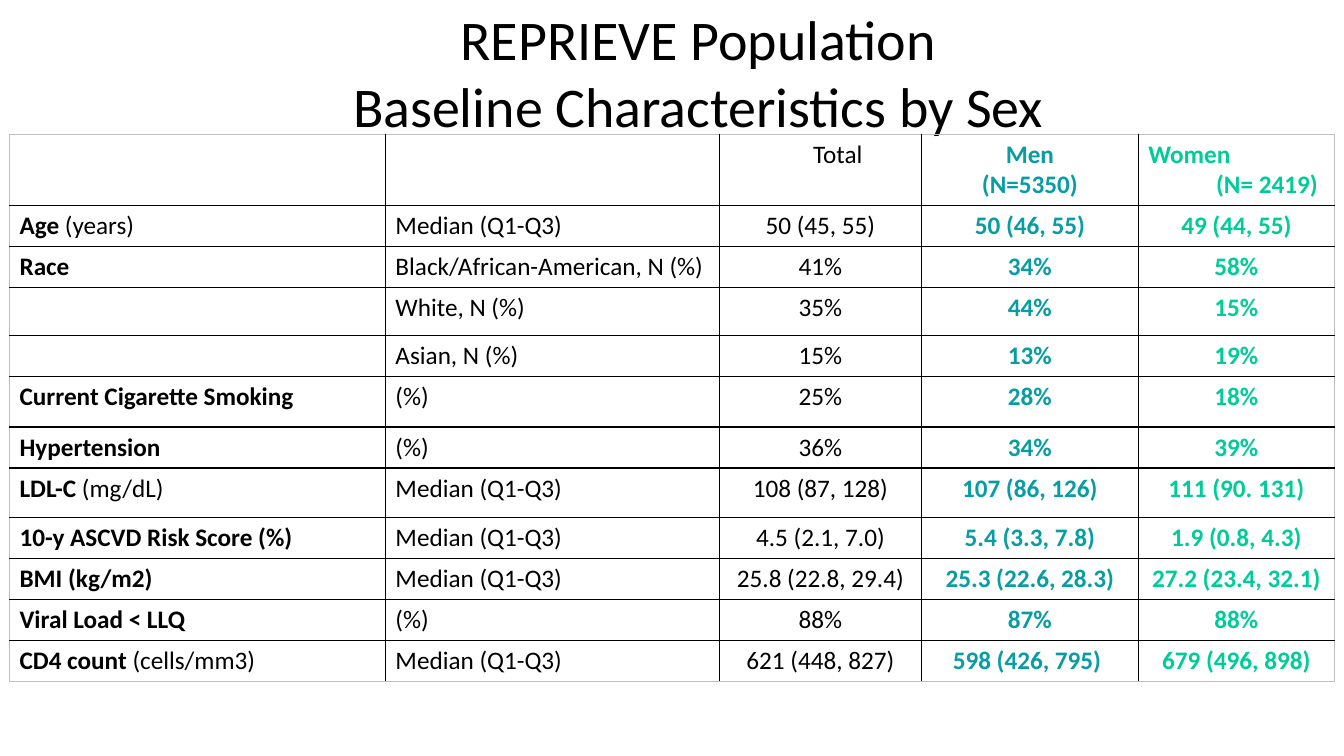
from pptx import Presentation
from pptx.dml.color import RGBColor
from pptx.enum.text import MSO_ANCHOR, MSO_AUTO_SIZE, PP_ALIGN as Align
from pptx.oxml.ns import qn
from pptx.util import Pt
from lxml.etree import SubElement

FONT = "Calibri"
BLACK, MEN, WOMEN, EDGE = "000000", "089CA3", "00CC99", "BFBFBF"
TITLE = "REPRIEVE Population \nBaseline Characteristics by Sex "
MEDIAN = "Median (Q1-Q3)"

HEADER = (("", ""), "", "Total", "Men\n(N=5350)", "Women\n(N= 2419)")
# (bold label, unit), measure, total, men, women
ROWS = [
    HEADER,
    (("Age ", "(years)"), MEDIAN, "50 (45, 55)", "50 (46, 55)", "49 (44, 55)"),
    (("Race", ""), "Black/African-American, N (%)", "41%", "34%", "58%"),
    (("", ""), "White, N (%)", "35%", "44%", "15%"),
    (("", ""), "Asian, N (%)", "15%", "13%", "19%"),
    (("Current Cigarette Smoking", ""), "(%)", "25%", "28%", "18%"),
    (("Hypertension", ""), "(%)", "36%", "34%", "39%"),
    (("LDL-C ", "(mg/dL)"), MEDIAN, "108 (87, 128)", "107 (86, 126)", "111 (90. 131)"),
    (("10-y ASCVD Risk Score (%)", ""), MEDIAN, "4.5 (2.1, 7.0)", "5.4 (3.3, 7.8)", "1.9 (0.8, 4.3)"),
    (("BMI (kg/m2)", ""), MEDIAN, "25.8 (22.8, 29.4)", "25.3 (22.6, 28.3)", "27.2 (23.4, 32.1)"),
    (("Viral Load < LLQ", ""), "(%)", "88%", "87%", "88%"),
    (("CD4 count ", "(cells/mm3)"), MEDIAN, "621 (448, 827)", "598 (426, 795) ", "679 (496, 898)"),
]
COL_WIDTHS = [268.5, 238.5, 144.5, 154.8, 140.2]
ROW_HEIGHT = 29
TALL_ROWS = {0: 50, 3: 34.5, 5: 36, 7: 35.5}
# alignment, colour, bold
COL_FORMATS = [(Align.LEFT, BLACK, True), (Align.LEFT, BLACK, False),
               (Align.CENTER, BLACK, False), (Align.CENTER, MEN, True),
               (Align.CENTER, WOMEN, True)]


def rgb(color):
    return RGBColor.from_string(color)


def add_run(p, text, color, size, bold=False):
    r = p.add_run()
    r.text = text
    for name, value in {"name": FONT, "size": Pt(size), "bold": bold}.items():
        setattr(r.font, name, value)
    r.font.color.rgb = rgb(color)


def add_paragraphs(tf, text, align, color, size, bold=False):
    for i, line in enumerate(text.split("\n")):
        p = tf.add_paragraph() if i else tf.paragraphs[0]
        p.alignment = align
        add_run(p, line, color, size, bold)


def set_borders(cell, row, col):
    """Draw black inner lines and pale lines round the table."""
    outer = {"L": col == 0, "R": col == len(COL_WIDTHS) - 1,
             "T": row == 0, "B": row == len(ROWS) - 1}
    tcPr = cell._tc.get_or_add_tcPr()
    for side, is_outer in outer.items():
        ln = SubElement(tcPr, qn(f"a:ln{side}"), w=str(Pt(1)))
        fill = SubElement(ln, qn("a:solidFill"))
        SubElement(fill, qn("a:srgbClr"), val=EDGE if is_outer else BLACK)


def add_title(s):
    sp = s.shapes.title
    box = {"left": 213.8, "top": -0.7, "width": 578.9, "height": 104.4}
    for name, value in box.items():
        setattr(sp, name, Pt(value))
    tf = sp.text_frame
    tf.word_wrap = True
    tf.auto_size = MSO_AUTO_SIZE.NONE
    tf.vertical_anchor = MSO_ANCHOR.TOP
    add_paragraphs(tf, TITLE, Align.CENTER, BLACK, 40)


def add_characteristics(s):
    heights = [TALL_ROWS.get(i, ROW_HEIGHT) for i in range(len(ROWS))]
    table = s.shapes.add_table(len(ROWS), len(COL_WIDTHS), Pt(6.8), Pt(95.8),
                               Pt(sum(COL_WIDTHS)), Pt(sum(heights))).table
    table.first_row = table.horz_banding = False
    for column, width in zip(table.columns, COL_WIDTHS):
        column.width = Pt(width)
    for i, (height, values) in enumerate(zip(heights, ROWS)):
        table.rows[i].height = Pt(height)
        for j, (value, (align, color, bold)) in enumerate(zip(values, COL_FORMATS)):
            cell = table.cell(i, j)
            set_borders(cell, i, j)
            cell.fill.background()
            text, unit = value if j == 0 else (value, "")
            if text:
                add_paragraphs(cell.text_frame, text, align, color, 18, bold)
            if unit:
                add_run(cell.text_frame.paragraphs[0], unit, color, 18)
    table.cell(0, 2).margin_left = Pt(32)
    women = table.cell(0, 4)
    women.margin_right = Pt(12)
    for p, align in zip(women.text_frame.paragraphs, (Align.LEFT, Align.RIGHT)):
        p.alignment = align


def main():
    prs = Presentation()
    prs.slide_width, prs.slide_height = Pt(960), Pt(540)
    s = prs.slides.add_slide(prs.slide_layouts[5])
    add_title(s)
    add_characteristics(s)
    prs.save("out.pptx")


if __name__ == "__main__":
    main()
